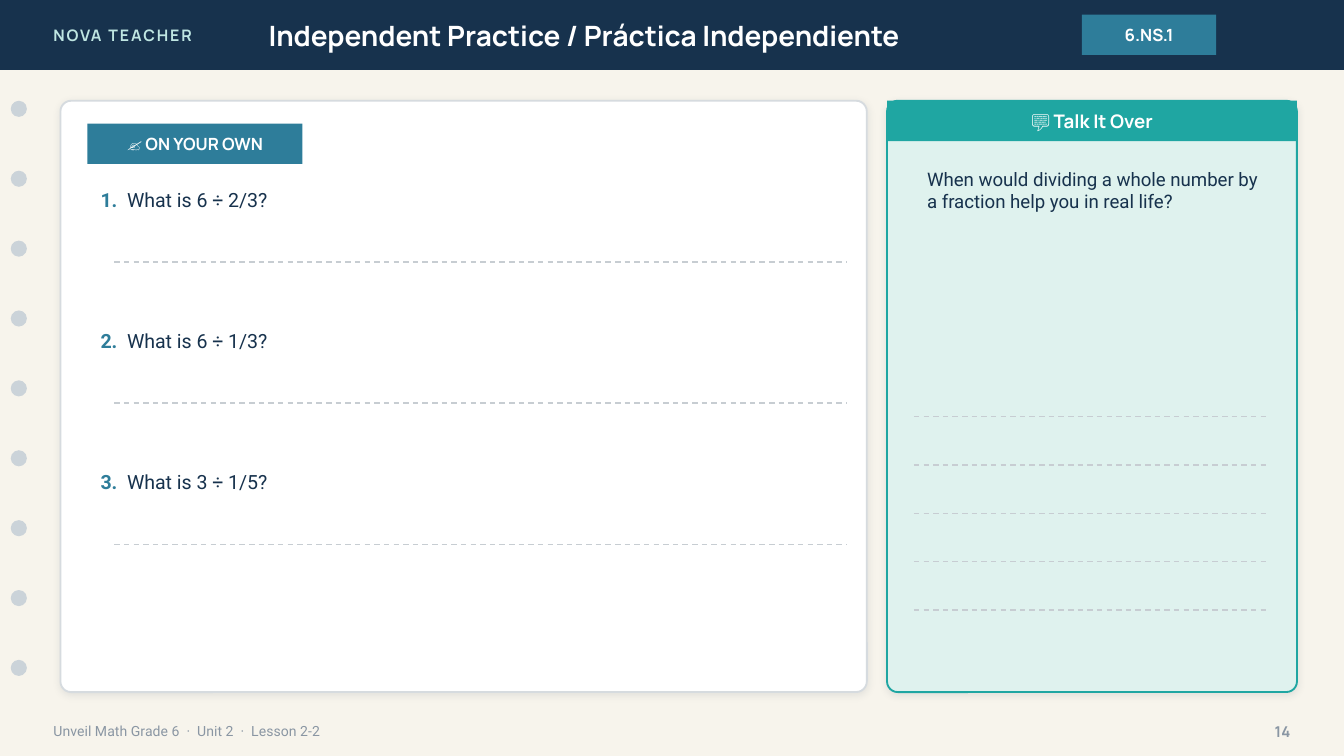
from pptx import Presentation
from pptx.dml.color import RGBColor
from pptx.enum.dml import MSO_LINE
from pptx.enum.shapes import MSO_CONNECTOR, MSO_SHAPE
from pptx.enum.text import MSO_ANCHOR, PP_ALIGN
from pptx.oxml import parse_xml
from pptx.oxml.ns import nsdecls
from pptx.util import Inches, Pt

C = {
    "cream": "F7F4EC", "navy": "17324D", "mint": "BFE6E2", "white": "FFFFFF",
    "blue": "2E7D9A", "hole": "CBD3D9", "grey": "8A96A3", "border": "D6DBDF",
    "rule": "C7CDD2", "pale": "DFF2EE", "teal": "1FA6A2", "shadow": "1C2E42",
}
C_RGB = {name: RGBColor.from_string(value) for name, value in C.items()}

prs = Presentation()
prs.slide_width = Inches(10)
prs.slide_height = Inches(10) * 9 // 16
slide = prs.slides.add_slide(prs.slide_layouts[6])
slide.background.fill.solid()
slide.background.fill.fore_color.rgb = C_RGB["cream"]


def add_box(box, fill, kind=MSO_SHAPE.RECTANGLE):
    s = slide.shapes.add_shape(kind, *[Inches(v) for v in box])
    s.shadow.inherit = False
    s.fill.solid()
    s.fill.fore_color.rgb = C_RGB[fill]
    s.line.fill.background()
    return s


def write(s, runs, align=PP_ALIGN.LEFT, anchor=MSO_ANCHOR.MIDDLE):
    """Fill a shape with one paragraph of (text, font, size, colour, bold) runs."""
    tf = s.text_frame
    tf.word_wrap = True
    tf.vertical_anchor = anchor
    p = tf.paragraphs[0]
    p.alignment = align
    for text, font, size, colour, bold in runs:
        r = p.add_run()
        r.text = text
        for name, value in {"name": font, "size": Pt(size), "bold": bold}.items():
            setattr(r.font, name, value)
        r.font.color.rgb = C_RGB[colour]
    return p


# Header bar and binder holes
add_box((0, 0, 10, 0.52), "navy")
for i in range(9):
    add_box((0.08, 0.75 + 0.52 * i, 0.12, 0.12), "hole", MSO_SHAPE.OVAL)

# Cards
for box, fill, border, radius in [
    ((0.45, 0.75, 6, 4.4), "white", "border", 0.018),
    ((6.6, 0.75, 3.05, 4.4), "pale", "teal", 0.026),
]:
    s = add_box(box, fill, MSO_SHAPE.ROUNDED_RECTANGLE)
    s.adjustments[0] = radius
    s.line.color.rgb = C_RGB[border]
    s.line.width = Pt(1)
    effects = s._element.spPr.find(".//{*}effectLst")
    effects.append(parse_xml(
        f'<a:outerShdw {nsdecls("a")} blurRad="{Pt(4)}" dist="{Pt(1)}" dir="5400000" '
        f'algn="bl" rotWithShape="0"><a:srgbClr val="{C["shadow"]}">'
        '<a:alpha val="10000"/></a:srgbClr></a:outerShdw>'))

# Filled labels
for box, fill, text, size in [
    ((8.05, 0.11, 1, 0.3), "blue", "6.NS.1", 9),
    ((0.65, 0.92, 1.6, 0.3), "blue", "✍️ ON YOUR OWN", 9),
    ((6.6, 0.75, 3.05, 0.3), "teal", "💬 Talk It Over", 10),
]:
    write(add_box(box, fill), [(text, "Manrope", size, "white", True)], PP_ALIGN.CENTER)

# Plain text: header, footer, discussion prompt and questions
MID, TOP = MSO_ANCHOR.MIDDLE, MSO_ANCHOR.TOP
LEFT, RIGHT = PP_ALIGN.LEFT, PP_ALIGN.RIGHT
brand = ("NOVA TEACHER", "Manrope", 8.5, "mint", True)
texts = [
    ((0.3, 0, 2.4, 0.52), [brand], LEFT, MID),
    ((1.9, 0, 5.6, 0.52), [("Independent Practice / Práctica Independiente",
                            "Manrope", 15, "white", True)], LEFT, MID),
    ((0.3, 5.3, 7, 0.28), [("Unveil Math Grade 6  ·  Unit 2  ·  Lesson 2-2",
                            "Roboto", 7.5, "grey", False)], LEFT, MID),
    ((9.2, 5.3, 0.5, 0.28), [("14", "Manrope", 8, "grey", True)], RIGHT, MID),
    ((6.8, 1.2, 2.7, 1.7), [("When would dividing a whole number by a fraction "
                             "help you in real life?", "Roboto", 10, "navy", False)],
     LEFT, TOP),
]
answer_lines = [(6.8, 9.45, 3.1 + 0.36 * i) for i in range(5)]
for i, problem in enumerate(["6 ÷ 2/3", "6 ÷ 1/3", "3 ÷ 1/5"]):
    y = 1.35 + 1.05 * i
    runs = [(f"{i + 1}.  ", "Roboto", 10.5, "blue", True),
            (f"What is {problem}?", "Roboto", 10.5, "navy", False)]
    texts.append(((0.65, y, 5.65, 0.5), runs, LEFT, TOP))
    answer_lines.append((0.85, 6.3, y + 0.6))

for box, runs, align, anchor in texts:
    tb = slide.shapes.add_textbox(*[Inches(v) for v in box])
    p = write(tb, runs, align, anchor)
    if runs[0] is brand:
        p.runs[0].font._element.set("spc", "100")

# Dashed answer lines
for x1, x2, y in answer_lines:
    line = slide.shapes.add_connector(
        MSO_CONNECTOR.STRAIGHT, Inches(x1), Inches(y), Inches(x2), Inches(y))
    line.line.color.rgb = C_RGB["rule"]
    line.line.width = Pt(0.75)
    line.line.dash_style = MSO_LINE.DASH
    line._element.spPr.append(parse_xml(f'<a:effectLst {nsdecls("a")}/>'))

prs.save("out.pptx")
